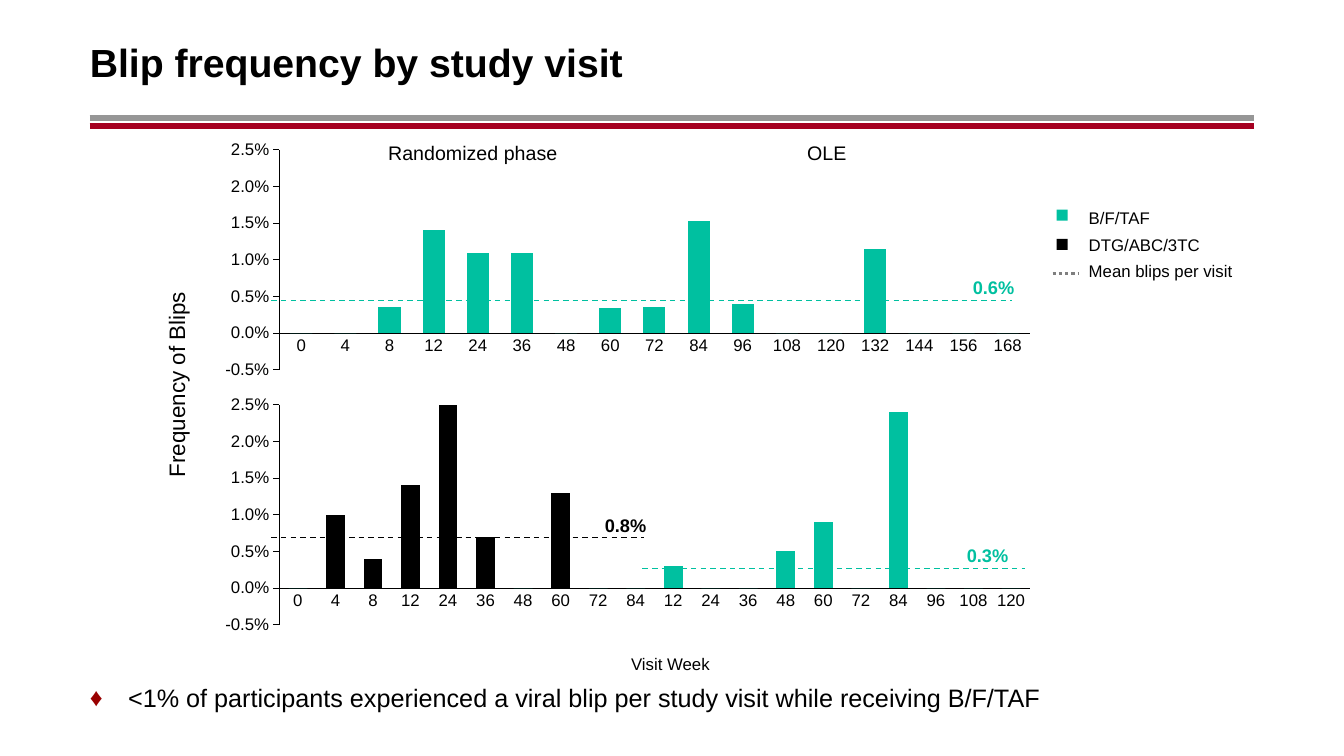
from lxml.etree import SubElement
from pptx import Presentation
from pptx.chart.data import CategoryChartData
from pptx.dml.color import RGBColor
from pptx.enum.chart import XL_CHART_TYPE, XL_TICK_LABEL_POSITION, XL_TICK_MARK
from pptx.enum.dml import MSO_LINE
from pptx.enum.shapes import MSO_CONNECTOR, MSO_SHAPE
from pptx.enum.text import MSO_ANCHOR, PP_ALIGN
from pptx.oxml import parse_xml
from pptx.oxml.ns import nsdecls, qn
from pptx.util import Inches, Pt

FONT = "Arial"
BLACK = RGBColor(0, 0, 0)
TEAL = RGBColor(0x00, 0xC0, 0xA0)
GREY = RGBColor(0x96, 0x96, 0x96)
DARK_GREY = RGBColor(0x7F, 0x7F, 0x7F)
CRIMSON = RGBColor(0xA5, 0x00, 0x21)

# Content
TITLE = "Blip frequency by study visit"
TAKEAWAY = "<1% of participants experienced a viral blip per study visit while receiving B/F/TAF"

# Per chart: top, visit weeks, blip frequencies, number of leading black bars
CHARTS = [
    (1.35,
     [0, 4, 8, 12, 24, 36, 48, 60, 72, 84, 96, 108, 120, 132, 144, 156, 168],
     [0, 0, 0.0036, 0.014, 0.0109, 0.0109, 0, 0.0034, 0.0036, 0.0153, 0.0039,
      0, 0, 0.0114, 0, 0, 0],
     0),
    (3.88,
     [0, 4, 8, 12, 24, 36, 48, 60, 72, 84, 12, 24, 36, 48, 60, 72, 84, 96, 108, 120],
     [0, 0.01, 0.004, 0.014, 0.025, 0.007, 0, 0.013, 0, 0, 0.003, 0, 0, 0.005,
      0.009, 0, 0.024, 0, 0, 0],
     10),
]

# Per mean: label, label left and top, line start, line end, line height, colour
MEANS = [
    ("0.6%", 9.55, 2.69, 2.69, 10.04, 2.98, TEAL),
    ("0.8%", 5.9, 5.05, 2.69, 6.39, 5.33, BLACK),
    ("0.3%", 9.49, 5.35, 6.37, 10.17, 5.64, TEAL),
]
PHASES = [("Randomized phase", 3.51), ("OLE", 7.02)]

# Per legend entry: label, label top, marker top, marker colour
LEGEND = [
    ("B/F/TAF", 2.01, 2.08, TEAL),
    ("DTG/ABC/3TC", 2.28, 2.37, BLACK),
    ("Mean blips per visit", 2.54, None, DARK_GREY),
]

deck = Presentation()
deck.slide_width, deck.slide_height = Inches(13.33), Inches(7.5)
page = deck.slides.add_slide(deck.slide_layouts[6])


def add_label(text, left, top, width, height, size, bold=False, color=BLACK,
              align=PP_ALIGN.LEFT, anchor=MSO_ANCHOR.TOP, inset=0.1):
    box = page.shapes.add_textbox(Inches(left), Inches(top), Inches(width), Inches(height))
    frame = box.text_frame
    frame.word_wrap = True
    frame.vertical_anchor = anchor
    frame.margin_left = Inches(inset)
    para = frame.paragraphs[0]
    para.alignment = align
    span = para.add_run()
    span.text = text
    span.font.name, span.font.size, span.font.bold = FONT, Pt(size), bold
    span.font.color.rgb = color
    return box


def add_rule(left, right, height, color, width, dash=None):
    rule = page.shapes.add_connector(
        MSO_CONNECTOR.STRAIGHT, Inches(left), Inches(height), Inches(right), Inches(height))
    rule.line.color.rgb = color
    rule.line.width = Pt(width)
    if dash:
        rule.line.dash_style = dash
    SubElement(rule._element.spPr, qn("a:effectLst"))


def style_axis(axis, tick):
    axis.has_major_gridlines = False
    axis.major_tick_mark, axis.minor_tick_mark = tick, XL_TICK_MARK.NONE
    axis.tick_label_position = XL_TICK_LABEL_POSITION.NEXT_TO_AXIS
    axis.format.line.color.rgb = BLACK
    axis.format.line.width = Pt(0.75)
    font = axis.tick_labels.font
    font.name, font.size, font.color.rgb = FONT, Pt(12), BLACK


def place_plot(chart, x, y, w, h):
    plot_area = chart._chartSpace.chart.plotArea
    for old in plot_area.findall(qn("c:layout")):
        plot_area.remove(old)
    sizes = "".join(f'<c:{name} val="{value}"/>'
                    for name, value in (("x", x), ("y", y), ("w", w), ("h", h)))
    plot_area.insert(0, parse_xml(
        f'<c:layout {nsdecls("c")}><c:manualLayout><c:layoutTarget val="inner"/>'
        f'<c:xMode val="edge"/><c:yMode val="edge"/>{sizes}</c:manualLayout></c:layout>'))


def add_blip_chart(top, weeks, frequencies, black_count):
    data = CategoryChartData(number_format="0.0%")
    data.categories = [str(week) for week in weeks]
    data.add_series("Series 1", frequencies)
    chart = page.shapes.add_chart(
        XL_CHART_TYPE.COLUMN_CLUSTERED, Inches(2.08), Inches(top),
        Inches(8.3), Inches(2.46), data).chart
    chart.has_legend = chart.has_title = False
    chart.font.name, chart.font.size, chart.font.color.rgb = FONT, Pt(10), BLACK
    style_axis(chart.category_axis, XL_TICK_MARK.NONE)
    values = chart.value_axis
    style_axis(values, XL_TICK_MARK.OUTSIDE)
    values.minimum_scale, values.maximum_scale, values.major_unit = -0.005, 0.025, 0.005
    values.tick_labels.number_format = "0.0%"
    values.tick_labels.number_format_is_linked = False
    plot = chart.plots[0]
    plot.gap_width, plot.overlap, plot.vary_by_categories = 100, -27, False
    series = plot.series[0]
    series.format.fill.solid()
    series.format.fill.fore_color.rgb = TEAL
    for index in range(black_count):
        if frequencies[index]:
            fill = series.points[index].format.fill
            fill.solid()
            fill.fore_color.rgb = BLACK
    place_plot(chart, 0.083, 0.055, 0.897, 0.888)


# Title and double rule
add_rule(0.89, 12.44, 1.17, GREY, 4.25)
add_rule(0.89, 12.44, 1.25, CRIMSON, 4.25)
add_label(TITLE, 0.89, 0.18, 11.55, 0.86, 28, bold=True, anchor=MSO_ANCHOR.MIDDLE, inset=0)

# Charts with their mean lines
for chart_row in CHARTS:
    add_blip_chart(*chart_row)
for label, left, top, start, end, height, color in MEANS:
    add_rule(start, end, height, color, 1, MSO_LINE.DASH)
    add_label(label, left, top, 0.71, 0.32, 13, bold=True, color=color)

# Axis and phase titles
axis_title = add_label("Frequency of Blips", 0.57, 3.63, 2.36, 0.37, 16, align=PP_ALIGN.CENTER)
axis_title.rotation = 270
add_label("Visit Week", 5.47, 6.44, 2.36, 0.3, 12, align=PP_ALIGN.CENTER)
for phase, left in PHASES:
    add_label(phase, left, 1.35, 2.36, 0.34, 14, align=PP_ALIGN.CENTER)

# Legend
for label, top, marker_top, color in LEGEND:
    add_label(label, 10.7, top, 2, 0.3, 12, anchor=MSO_ANCHOR.MIDDLE)
    if marker_top is None:
        add_rule(10.44, 10.69, 2.71, color, 2.25, MSO_LINE.ROUND_DOT)
        continue
    marker = page.shapes.add_shape(
        MSO_SHAPE.RECTANGLE, Inches(10.48), Inches(marker_top), Inches(0.11), Inches(0.11))
    marker.shadow.inherit = False
    marker.fill.solid()
    marker.fill.fore_color.rgb = color
    marker.line.fill.background()

# Takeaway bullet
takeaway = add_label(TAKEAWAY, 0.89, 6.72, 11.65, 0.34, 18, inset=0)
takeaway.text_frame.margin_right = 0
para = takeaway.text_frame.paragraphs[0]
para.space_before = Pt(9)
properties = para._p.get_or_add_pPr()
properties.set("marL", str(Inches(0.38)))
properties.set("indent", str(-Inches(0.38)))
bullet_color = SubElement(properties, qn("a:buClr"))
SubElement(bullet_color, qn("a:srgbClr"), val="990000")
SubElement(properties, qn("a:buFont"), typeface=FONT)
SubElement(properties, qn("a:buChar"), char="♦")

deck.save("out.pptx")
